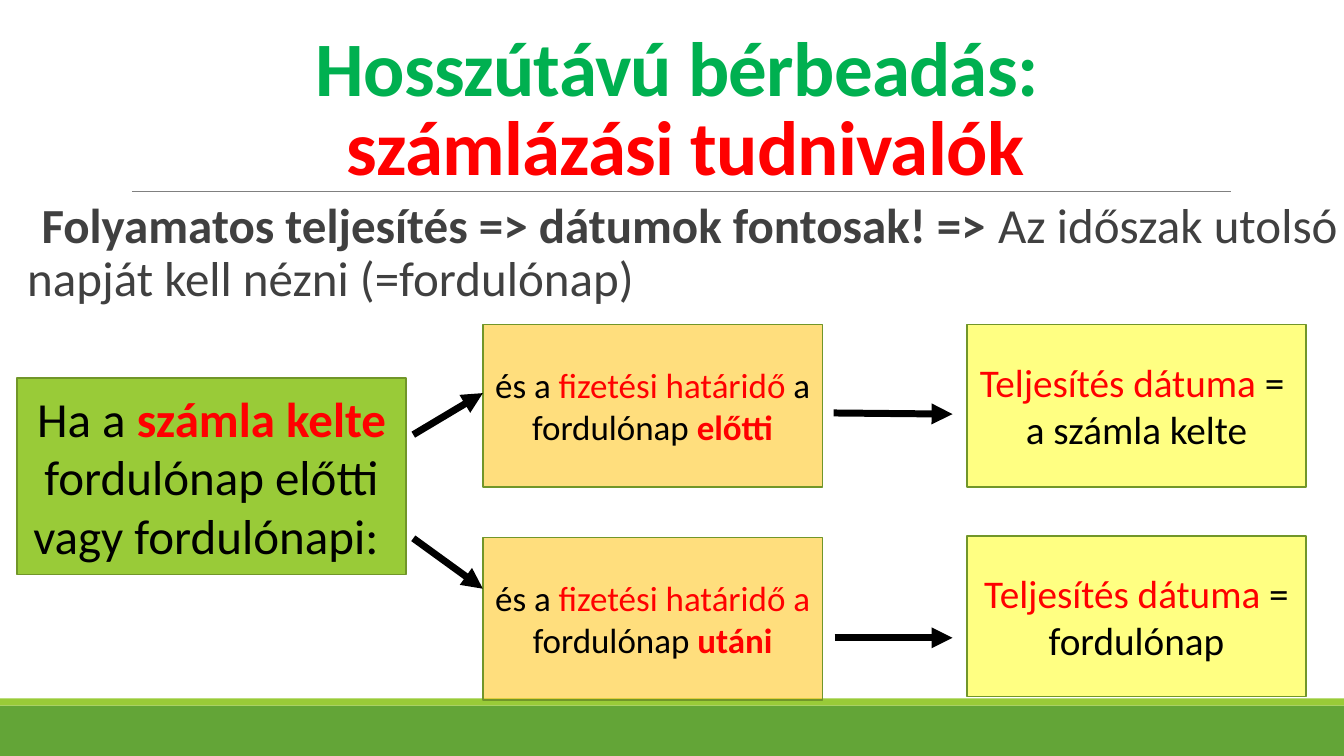
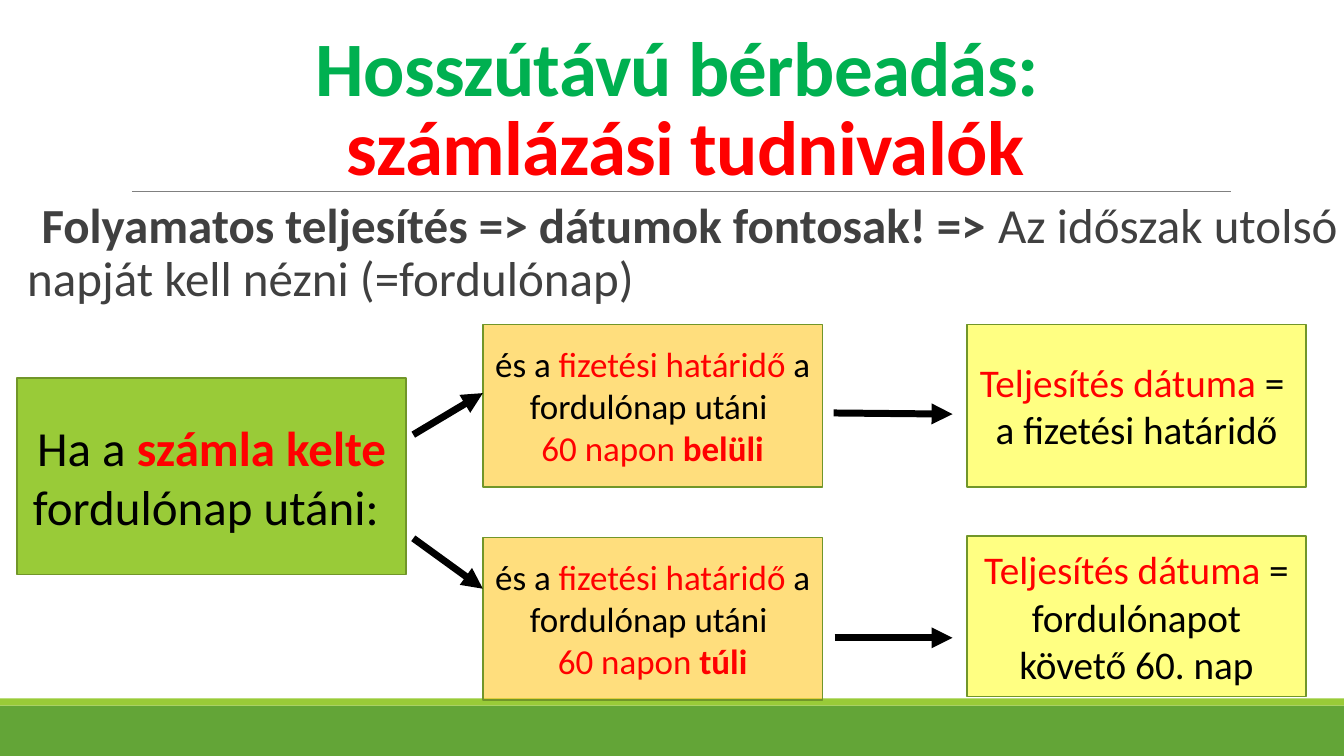
from lxml.etree import SubElement
from pptx import Presentation
from pptx.dml.color import RGBColor
from pptx.enum.shapes import MSO_CONNECTOR, MSO_SHAPE
from pptx.enum.text import MSO_ANCHOR, PP_ALIGN
from pptx.oxml.ns import qn
from pptx.util import Pt

COLORS = {
    "band": "63A537", "lime": "99CB38", "rule": "808080", "edge": "719629",
    "title": "00B050", "red": "FF0000", "body": "404040", "black": "000000",
    "amber": "FFC000", "yellow": "FFFF00",
}
FONT = "Calibri"
SLIDE_W, SLIDE_H = 960, 540

# Boxes: left, top, width, height
CONDITION_BOX = (12.2, 270, 278, 140.4)
DEADLINE_BOXES = [(344.9, 231.8, 242.6, 116), (344.9, 384, 242.6, 116)]
OUTCOME_BOXES = [(690.5, 231.8, 242.6, 116), (690.5, 383, 242.6, 114.5)]
# Arrows: from x, from y, to x, to y
ARROWS = [
    (295.2, 310.5, 344.9, 280.8), (295.2, 384.5, 344.9, 420.5),
    (595.5, 295, 680.4, 295.8), (596.2, 455.6, 680.4, 455.6),
]

# A paragraph is a list of runs: (text, colour, bold)
TITLE = [[("Hosszútávú bérbeadás: ", "title", True), ("\n", "title", True),
          ("számlázási tudnivalók", "red", True)]]
INTRO = [[("Folyamatos teljesítés => dátumok fontosak! => ", "body", True),
          ("Az időszak utolsó napját kell nézni (=fordulónap)", "body", False)]]


def condition(ending):
    return [[("Ha a ", "black", False), ("számla kelte ", "red", True),
             (ending, "black", False)]]


DEADLINE_START = [("és a ", "black", False), ("fizetési határidő ", "red", False),
                  ("a ", "black", False)]
OUTCOME_START = ("Teljesítés dátuma", "red", False)


def deadline_60_days(side):
    return [DEADLINE_START, [("fordulónap utáni ", "black", False)],
            [("60 napon ", "red", False), (side, "red", True)]]


def outcome_two_lines(date):
    return [[OUTCOME_START, (" = ", "black", False)], [(date, "black", False)]]


def outcome_one_line(date):
    return [[OUTCOME_START, (f" = {date}", "black", False)]]


CASES = [
    {
        "condition": condition("fordulónap előtti vagy fordulónapi: "),
        "deadlines": [
            [DEADLINE_START,
             [("fordulónap ", "black", False), ("előtti", "red", True)]],
            [[("és a ", "black", False), ("fizetési határidő a ", "red", False),
              ("fordulónap ", "black", False), ("utáni", "red", True)]],
        ],
        "outcomes": [outcome_two_lines("a számla kelte"),
                     outcome_one_line("fordulónap")],
    },
    {
        "condition": condition("fordulónap utáni: "),
        "deadlines": [deadline_60_days("belüli"), deadline_60_days("túli")],
        "outcomes": [outcome_two_lines("a fizetési határidő"),
                     outcome_one_line("fordulónapot követő 60. nap")],
    },
]


def rgb(name):
    return RGBColor.from_string(COLORS[name])


def points(values):
    return [Pt(value) for value in values]


def write(frame, paragraphs, size, align=PP_ALIGN.CENTER, anchor=MSO_ANCHOR.MIDDLE):
    frame.word_wrap = True
    frame.vertical_anchor = anchor
    for index, runs in enumerate(paragraphs):
        paragraph = frame.add_paragraph() if index else frame.paragraphs[0]
        paragraph.alignment = align
        for text, color, bold in runs:
            if text == "\n":
                paragraph.add_line_break()
                continue
            run = paragraph.add_run()
            run.text = text
            run.font.name = FONT
            run.font.size = Pt(size)
            run.font.bold = bold
            run.font.color.rgb = rgb(color)


def add_rect(slide, box, fill, edge=None, opacity=100):
    rect = slide.shapes.add_shape(MSO_SHAPE.RECTANGLE, *points(box))
    rect.shadow.inherit = False
    rect.fill.solid()
    rect.fill.fore_color.rgb = rgb(fill)
    if opacity < 100:
        fill_color = rect._element.spPr.find(qn("a:solidFill")).find(qn("a:srgbClr"))
        SubElement(fill_color, qn("a:alpha")).set("val", str(opacity * 1000))
    if edge:
        rect.line.color.rgb = rgb(edge)
        rect.line.width = Pt(1.25)
    else:
        rect.line.fill.background()
    return rect


def add_step(slide, box, paragraphs, size, fill, opacity=100):
    step = add_rect(slide, box, fill, "edge", opacity)
    write(step.text_frame, paragraphs, size)


def add_line(slide, ends, color, width, arrow=False):
    line = slide.shapes.add_connector(MSO_CONNECTOR.STRAIGHT, *points(ends))
    line.line.color.rgb = rgb(color)
    line.line.width = Pt(width)
    if arrow:
        SubElement(line.line._get_or_add_ln(), qn("a:tailEnd")).set("type", "triangle")
    SubElement(line._element.spPr, qn("a:effectLst"))


def add_title(slide):
    frame = slide.shapes.add_textbox(*points((65.5, 23, 848.2, 114.5))).text_frame
    write(frame, TITLE, 55)
    paragraph = frame.paragraphs[0]
    paragraph.line_spacing = 0.85
    for run in paragraph.runs:
        run.font._element.set("spc", "-50")


def add_intro(slide):
    frame = slide.shapes.add_textbox(*points((12.2, 140.4, 948.2, 354.2))).text_frame
    frame.margin_left = frame.margin_right = 0
    write(frame, INTRO, 35, PP_ALIGN.LEFT, MSO_ANCHOR.TOP)
    paragraph = frame.paragraphs[0]
    paragraph.line_spacing = 0.9
    paragraph.space_before = Pt(12)
    paragraph.space_after = Pt(2)
    properties = paragraph._p.get_or_add_pPr()
    properties.set("marL", str(Pt(7.2)))
    properties.set("indent", str(-Pt(7.2)))
    bullet_color = SubElement(properties, qn("a:buClr"))
    SubElement(bullet_color, qn("a:srgbClr")).set("val", COLORS["lime"])
    SubElement(properties, qn("a:buChar")).set("char", " ")


def add_frame(slide):
    """Draw the bands, rule, title and introduction that every slide shares."""
    add_rect(slide, (0, 504, SLIDE_W, 36), "band")
    add_rect(slide, (0, 498.8, SLIDE_W, 5.2), "lime")
    add_line(slide, (94.3, 136.8, 879.1, 136.8), "rule", 0.5)
    add_title(slide)
    add_intro(slide)


def add_case(slide, case):
    add_step(slide, CONDITION_BOX, case["condition"], 35, "lime")
    for box, deadline in zip(DEADLINE_BOXES, case["deadlines"]):
        add_step(slide, box, deadline, 25, "amber", 51)
    for box, outcome in zip(OUTCOME_BOXES, case["outcomes"]):
        add_step(slide, box, outcome, 28, "yellow", 49)
    for ends in ARROWS:
        add_line(slide, ends, "black", 5, arrow=True)


def main():
    deck = Presentation()
    deck.slide_width, deck.slide_height = Pt(SLIDE_W), Pt(SLIDE_H)
    for case in CASES:
        slide = deck.slides.add_slide(deck.slide_layouts[6])
        add_frame(slide)
        add_case(slide, case)
    deck.save("out.pptx")


if __name__ == "__main__":
    main()
